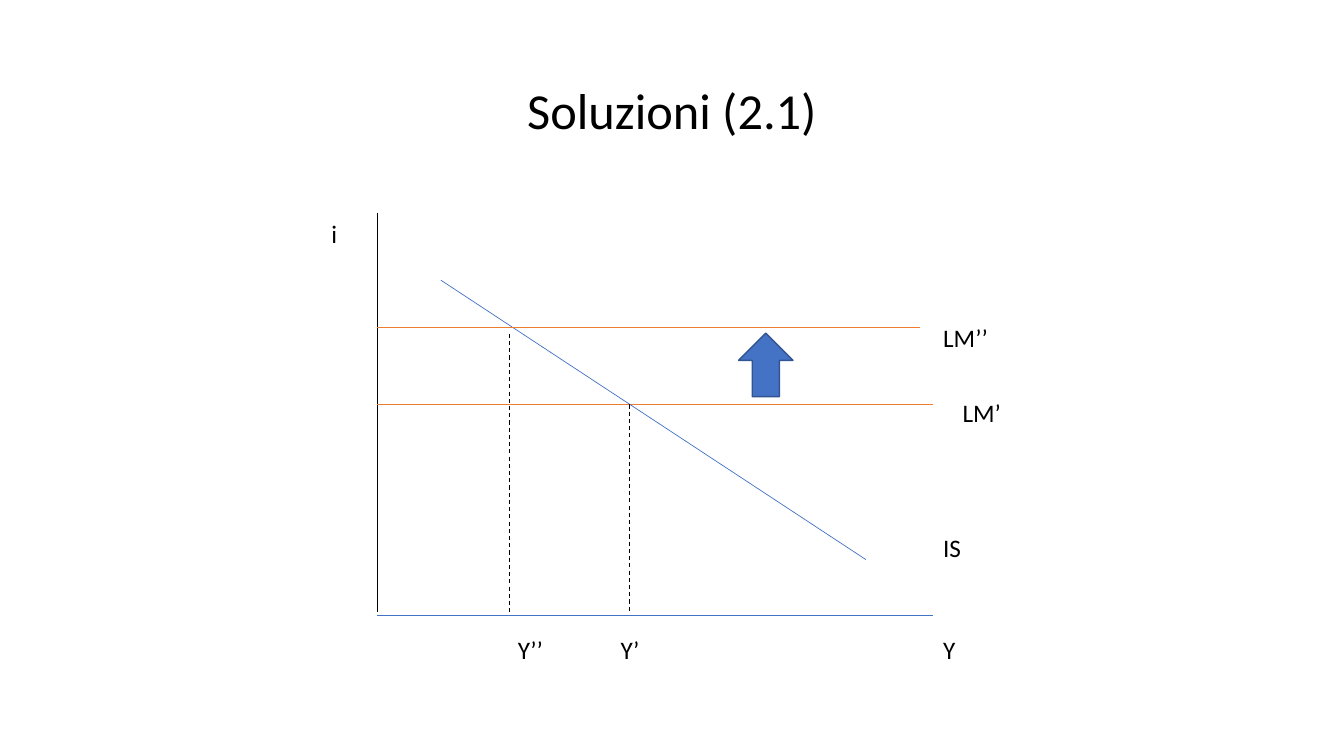
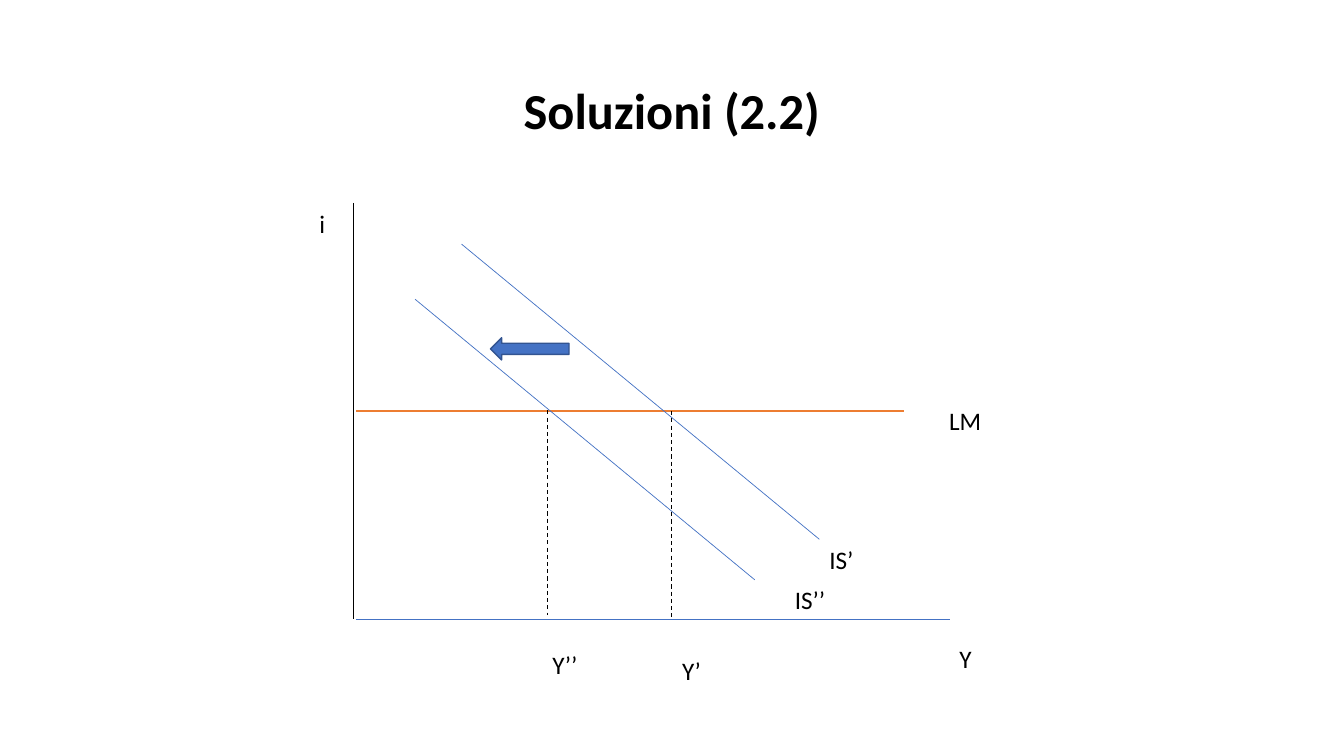
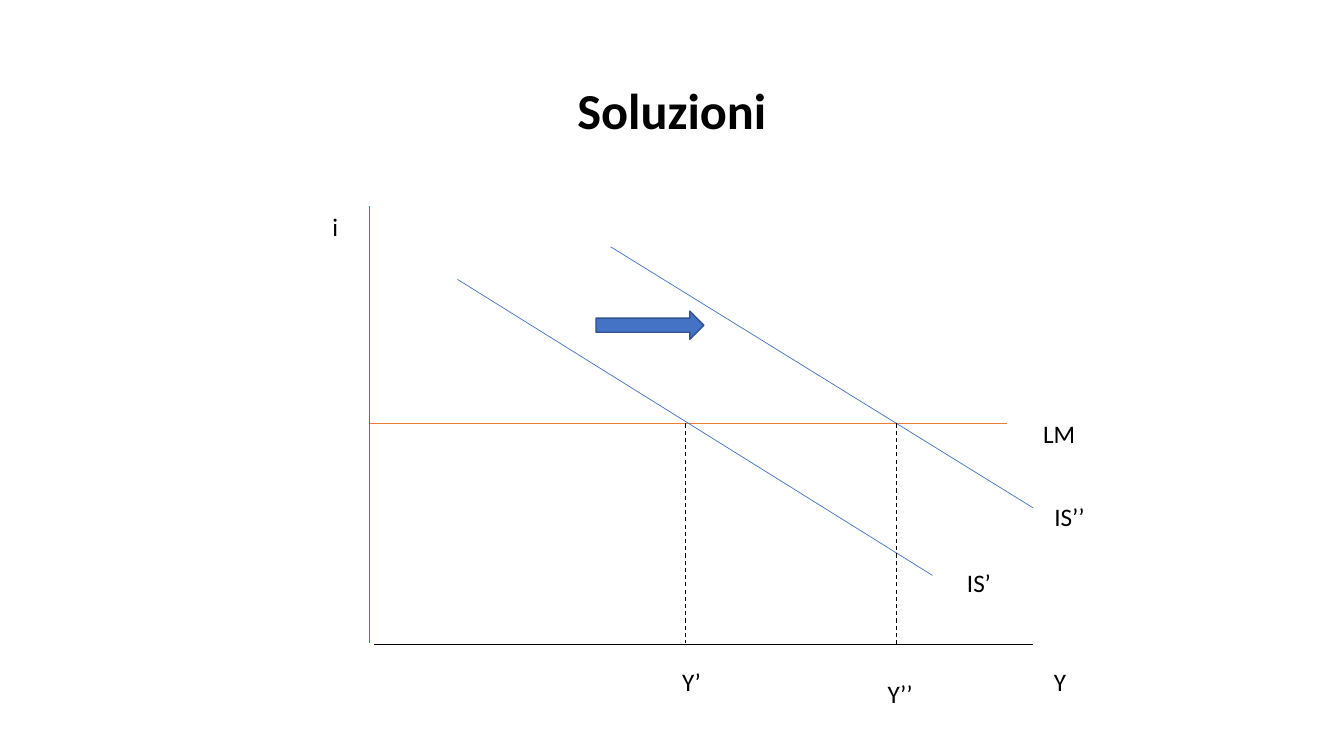
import dataclasses

import pptx
import pptx.dml.color
import pptx.enum.dml
import pptx.enum.shapes
import pptx.enum.text
import pptx.oxml.ns
import pptx.presentation
import pptx.slide
import pptx.text.text
import pptx.util
from lxml import etree
from pptx.util import Cm

FONT = "Calibri"
COLORS = {
    "black": "000000",
    "blue": "4472C4",
    "orange": "ED7D31",
    "edge": "325491",
}
# Advance of each label glyph at 18 pt, in centimetres
GLYPHS = {"i": 0.15, "Y": 0.33, "I": 0.16, "S": 0.29, "L": 0.27, "M": 0.54, "’": 0.16}
MARGIN = 0.51


@dataclasses.dataclass(frozen=True)
class Line:
    x1: float
    y1: float
    x2: float
    y2: float
    color: str = "blue"
    width: float = 0.5
    dashed: bool = False


@dataclasses.dataclass(frozen=True)
class Label:
    text: str
    left: float
    top: float


@dataclasses.dataclass(frozen=True)
class Arrow:
    left: float
    top: float
    width: float
    height: float
    turn: int = 0


@dataclasses.dataclass(frozen=True)
class Graph:
    title: str
    bold: bool
    lines: list[Line]
    labels: list[Label]
    arrow: Arrow


def flat(y: float, start: float, end: float, color: str, width: float = 0.5) -> Line:
    """Level line at height y."""
    return Line(start, y, end, y, color, width)


def rise(x: float, top: float, end: float, color: str = "black") -> Line:
    """Upright line at x."""
    return Line(x, top, x, end, color)


def drop(x: float, top: float, end: float) -> Line:
    """Dashed line from a crossing down to the Y axis."""
    return Line(x, top, x, end, "black", 0.75, True)


GRAPHS = [
    Graph(
        "Soluzioni (2.1)", False,
        [
            rise(9.5, 5.36, 15.42),
            flat(15.5, 9.5, 23.52, "blue"),
            flat(10.19, 9.5, 23.52, "orange"),
            Line(11.11, 7.06, 21.82, 14.1),
            flat(8.26, 9.5, 23.19, "orange"),
            drop(12.85, 8.41, 15.42),
            drop(15.86, 10.19, 15.42),
        ],
        [
            Label("i", 8.1, 5.38),
            Label("Y", 23.52, 15.86),
            Label("IS", 23.52, 13.28),
            Label("LM’", 24.01, 9.88),
            Label("LM’’", 23.52, 8),
            Label("Y’", 15.39, 15.86),
            Label("Y’’", 12.8, 15.86),
        ],
        Arrow(18.5, 8.51, 1.6, 1.37, 270),
    ),
    Graph(
        "Soluzioni (2.2)", True,
        [
            rise(8.9, 5.11, 15.6),
            flat(15.6, 8.98, 23.93, "blue"),
            flat(10.35, 8.98, 22.78, "orange", 1.5),
            Line(11.63, 6.15, 20.65, 13.59),
            Line(10.46, 7.54, 19.02, 14.61),
            drop(13.79, 10.34, 15.49),
            drop(16.92, 10.36, 15.6),
        ],
        [
            Label("i", 7.8, 5.13),
            Label("Y", 23.93, 16.08),
            Label("LM", 23.67, 10.08),
            Label("IS’", 20.65, 13.59),
            Label("IS’’", 19.78, 14.61),
            Label("Y’", 16.94, 16.38),
            Label("Y’’", 13.67, 16.23),
        ],
        Arrow(12.36, 8.51, 1.98, 0.56, 180),
    ),
    Graph(
        "Soluzioni", True,
        [
            rise(9.32, 5.18, 16.21, "blue"),
            flat(16.23, 9.42, 26.04, "black"),
            flat(10.67, 9.32, 25.37, "orange"),
            Line(11.53, 7.04, 23.5, 14.5),
            Line(15.39, 6.22, 26.04, 12.8),
            drop(17.27, 10.67, 16.21),
            drop(22.59, 10.67, 16.23),
        ],
        [
            Label("i", 8.13, 5.2),
            Label("Y", 26.31, 16.67),
            Label("IS’", 24.12, 14.17),
            Label("LM", 26.04, 10.41),
            Label("IS’’", 26.32, 12.52),
            Label("Y’", 16.94, 16.67),
            Label("Y’’", 22.12, 16.96),
        ],
        Arrow(15.02, 7.84, 2.72, 0.71),
    ),
]


def tint(name: str) -> pptx.dml.color.RGBColor:
    return pptx.dml.color.RGBColor.from_string(COLORS[name])


def style(para: pptx.text.text._Paragraph, size: float, bold: bool = False) -> None:
    font = para.font
    font.name = FONT
    font.size = pptx.util.Pt(size)
    font.bold = bold
    font.color.rgb = tint("black")


def add_title(slide: pptx.slide.Slide, text: str, bold: bool) -> None:
    box = slide.shapes.add_textbox(Cm(2.33), Cm(1.02), Cm(29.21), Cm(3.68))
    frame = box.text_frame
    frame.word_wrap = True
    frame.vertical_anchor = pptx.enum.text.MSO_ANCHOR.MIDDLE
    para = frame.paragraphs[0]
    para.text = text
    para.alignment = pptx.enum.text.PP_ALIGN.CENTER
    para.line_spacing = 0.9
    style(para, 36, bold)


def add_line(slide: pptx.slide.Slide, line: Line) -> None:
    link = slide.shapes.add_connector(
        pptx.enum.shapes.MSO_CONNECTOR.STRAIGHT,
        Cm(line.x1), Cm(line.y1), Cm(line.x2), Cm(line.y2),
    )
    link.line.color.rgb = tint(line.color)
    link.line.width = pptx.util.Pt(line.width)
    if line.dashed:
        link.line.dash_style = pptx.enum.dml.MSO_LINE.DASH
    etree.SubElement(link._element.spPr, pptx.oxml.ns.qn("a:effectLst"))


def add_label(slide: pptx.slide.Slide, label: Label) -> None:
    width = MARGIN + sum(GLYPHS[glyph] for glyph in label.text)
    box = slide.shapes.add_textbox(Cm(label.left), Cm(label.top), Cm(width), Cm(1.02))
    frame = box.text_frame
    frame.word_wrap = False
    frame.auto_size = pptx.enum.text.MSO_AUTO_SIZE.SHAPE_TO_FIT_TEXT
    para = frame.paragraphs[0]
    para.text = label.text
    style(para, 18)


def add_arrow(slide: pptx.slide.Slide, arrow: Arrow) -> None:
    shape = slide.shapes.add_shape(
        pptx.enum.shapes.MSO_SHAPE.RIGHT_ARROW,
        Cm(arrow.left), Cm(arrow.top), Cm(arrow.width), Cm(arrow.height),
    )
    shape.rotation = arrow.turn
    shape.shadow.inherit = False
    shape.fill.solid()
    shape.fill.fore_color.rgb = tint("blue")
    shape.line.color.rgb = tint("edge")
    shape.line.width = pptx.util.Pt(1)


def add_graph(deck: pptx.presentation.Presentation, graph: Graph) -> None:
    slide = deck.slides.add_slide(deck.slide_layouts[6])
    add_title(slide, graph.title, graph.bold)
    for line in graph.lines:
        add_line(slide, line)
    for label in graph.labels:
        add_label(slide, label)
    add_arrow(slide, graph.arrow)


def main() -> None:
    deck = pptx.Presentation()
    deck.slide_width = Cm(33.87)
    deck.slide_height = Cm(19.05)
    for graph in GRAPHS:
        add_graph(deck, graph)
    deck.save("out.pptx")


if __name__ == "__main__":
    main()
